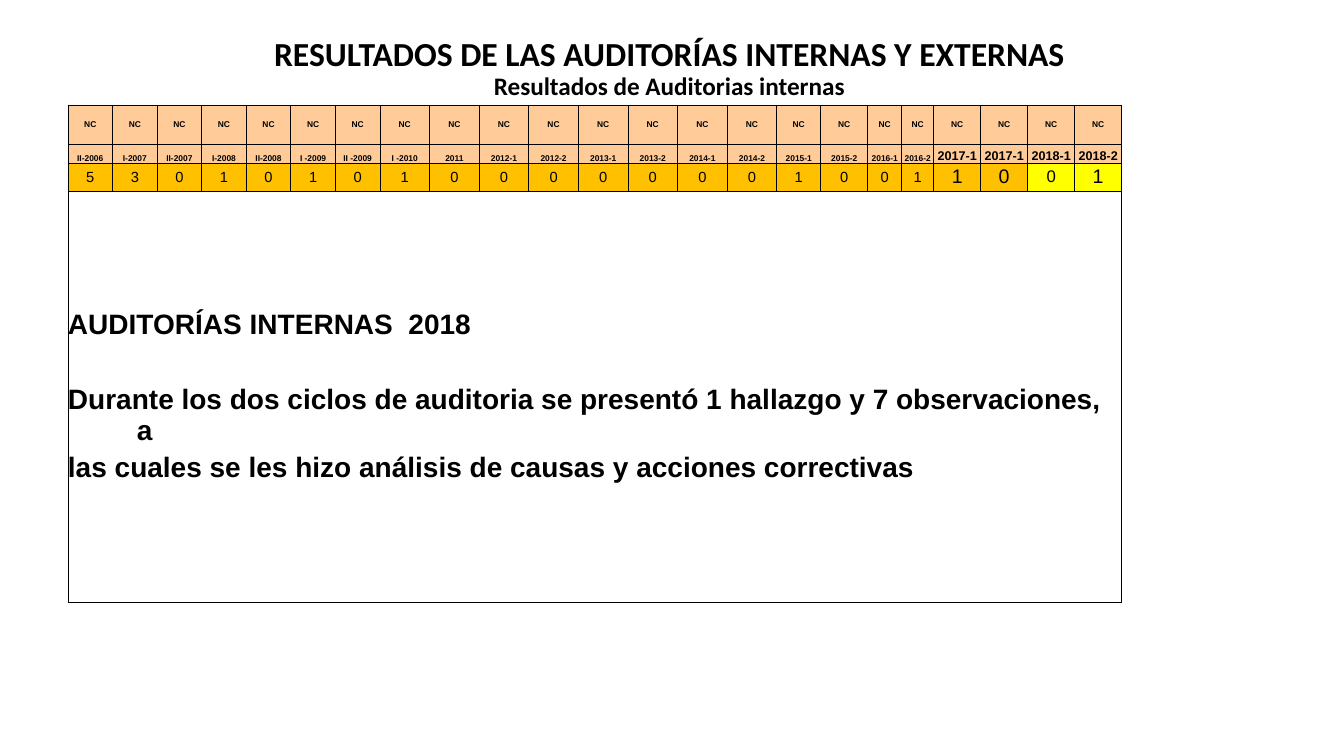
from dataclasses import dataclass

import pptx
import pptx.dml.color
import pptx.enum.text
import pptx.oxml.ns
import pptx.util
from lxml import etree

EMU_PER_PX = 914400 / 100.8
COLORS = {
    "ink": "000000",
    "paper": "FFFFFF",
    "peach": "FFCC99",
    "amber": "FFC000",
    "yellow": "FFFF00",
}
ALIGN = pptx.enum.text.PP_ALIGN
ANCHOR = pptx.enum.text.MSO_ANCHOR


@dataclass(frozen=True)
class Audit:
    period: str
    findings: int
    period_size: float = 6
    findings_size: float = 10.5
    fill: str = "amber"


@dataclass(frozen=True)
class ColumnBand:
    count: int
    width: int


@dataclass(frozen=True)
class Remark:
    text: str
    space_before: float


AUDITS = [
    Audit("II-2006", 5),
    Audit("I-2007", 3),
    Audit("II-2007", 0),
    Audit("I-2008", 1),
    Audit("II-2008", 0),
    Audit("I -2009", 1),
    Audit("II -2009", 0),
    Audit("I -2010", 1),
    Audit("2011", 0),
    Audit("2012-1", 0),
    Audit("2012-2", 0),
    Audit("2013-1", 0),
    Audit("2013-2", 0),
    Audit("2014-1", 0),
    Audit("2014-2", 0),
    Audit("2015-1", 1),
    Audit("2015-2", 0),
    Audit("2016-1", 0),
    Audit("2016-2", 1),
    Audit("2017-1", 1, 9, 14),
    Audit("2017-1", 0, 9, 14),
    Audit("2018-1", 0, 9, 12, "yellow"),
    Audit("2018-2", 1, 9, 14, "yellow"),
]
COLUMN_BANDS = [
    ColumnBand(7, 312),
    ColumnBand(8, 397),
    ColumnBand(1, 44),
    ColumnBand(1, 47),
    ColumnBand(1, 34),
    ColumnBand(1, 32),
    ColumnBand(4, 188),
]
ROW_HEIGHTS = [39, 19, 28, 411]
REMARKS = [
    Remark("AUDITORÍAS INTERNAS  2018", 0),
    Remark(
        "Durante los dos ciclos de auditoria se presentó 1 hallazgo y 7 observaciones, a",
        31,
    ),
    Remark("las cuales se les hizo análisis de causas y acciones correctivas", 4),
]


def px(length: float) -> int:
    return round(length * EMU_PER_PX)


def rgb(name: str) -> pptx.dml.color.RGBColor:
    return pptx.dml.color.RGBColor.from_string(COLORS[name])


def write(paragraph, text: str, *, size: float, bold: bool = True,
          font: str = "Arial", align=ALIGN.LEFT) -> None:
    paragraph.alignment = align
    run = paragraph.add_run()
    run.text = text
    run.font.size = pptx.util.Pt(size)
    run.font.bold = bold
    run.font.name = font
    run.font.color.rgb = rgb("ink")


def format_cell(cell, fill: str, anchor=ANCHOR.MIDDLE) -> None:
    properties = cell._tc.get_or_add_tcPr()
    for side in ("a:lnL", "a:lnR", "a:lnT", "a:lnB"):
        border = etree.SubElement(properties, pptx.oxml.ns.qn(side), w="6350")
        solid = etree.SubElement(border, pptx.oxml.ns.qn("a:solidFill"))
        etree.SubElement(solid, pptx.oxml.ns.qn("a:srgbClr"), val=COLORS["ink"])
    cell.fill.solid()
    cell.fill.fore_color.rgb = rgb(fill)
    cell.vertical_anchor = anchor
    cell.margin_left = cell.margin_right = 0
    cell.margin_top = cell.margin_bottom = 0


def add_heading(slide) -> None:
    heading = slide.shapes.title
    heading.left, heading.top = px(216), px(70)
    heading.width, heading.height = px(907), px(36)
    frame = heading.text_frame
    frame.auto_size = pptx.enum.text.MSO_AUTO_SIZE.NONE
    frame.word_wrap = True
    frame.vertical_anchor = ANCHOR.BOTTOM
    lines = frame.paragraphs[0]
    lines.line_spacing = 0.9
    write(lines, "RESULTADOS DE LAS AUDITORÍAS INTERNAS Y EXTERNAS",
          size=24, font="Calibri", align=ALIGN.CENTER)
    lines.add_line_break()
    line_break = lines._p.find(pptx.oxml.ns.qn("a:br"))
    etree.SubElement(line_break, pptx.oxml.ns.qn("a:rPr"), sz="2400")
    write(lines, "Resultados de Auditorias internas",
          size=18, font="Calibri", align=ALIGN.CENTER)


def add_remarks(cell) -> None:
    frame = cell.text_frame
    for index, remark in enumerate(REMARKS):
        paragraph = frame.add_paragraph() if index else frame.paragraphs[0]
        properties = paragraph._p.get_or_add_pPr()
        properties.set("marL", str(px(69)))
        properties.set("indent", str(-px(69)))
        paragraph.space_before = pptx.util.Pt(remark.space_before)
        write(paragraph, remark.text, size=20)


def add_audit_table(slide) -> None:
    widths = [band.width / band.count
              for band in COLUMN_BANDS for _ in range(band.count)]
    audits = slide.shapes.add_table(
        len(ROW_HEIGHTS), len(AUDITS), px(68), px(105),
        px(sum(widths)), px(sum(ROW_HEIGHTS)),
    ).table
    audits.first_row = audits.horz_banding = False
    for column, width in zip(audits.columns, widths):
        column.width = px(width)
    for row, height in zip(audits.rows, ROW_HEIGHTS):
        row.height = px(height)
    for column, audit in enumerate(AUDITS):
        entries = [
            ("NC", 6, True, "peach", ANCHOR.MIDDLE),
            (audit.period, audit.period_size, True, "peach", ANCHOR.BOTTOM),
            (str(audit.findings), audit.findings_size, False, audit.fill,
             ANCHOR.MIDDLE),
        ]
        for row, (text, size, bold, fill, anchor) in enumerate(entries):
            cell = audits.cell(row, column)
            format_cell(cell, fill, anchor)
            write(cell.text_frame.paragraphs[0], text,
                  size=size, bold=bold, align=ALIGN.CENTER)
        format_cell(audits.cell(3, column), "paper")
    remarks = audits.cell(3, 0)
    remarks.merge(audits.cell(3, len(AUDITS) - 1))
    add_remarks(remarks)


def main() -> None:
    presentation = pptx.Presentation()
    presentation.slide_width = px(1344)
    presentation.slide_height = px(756)
    slide = presentation.slides.add_slide(presentation.slide_layouts[5])
    add_heading(slide)
    add_audit_table(slide)
    presentation.save("out.pptx")


if __name__ == "__main__":
    main()
